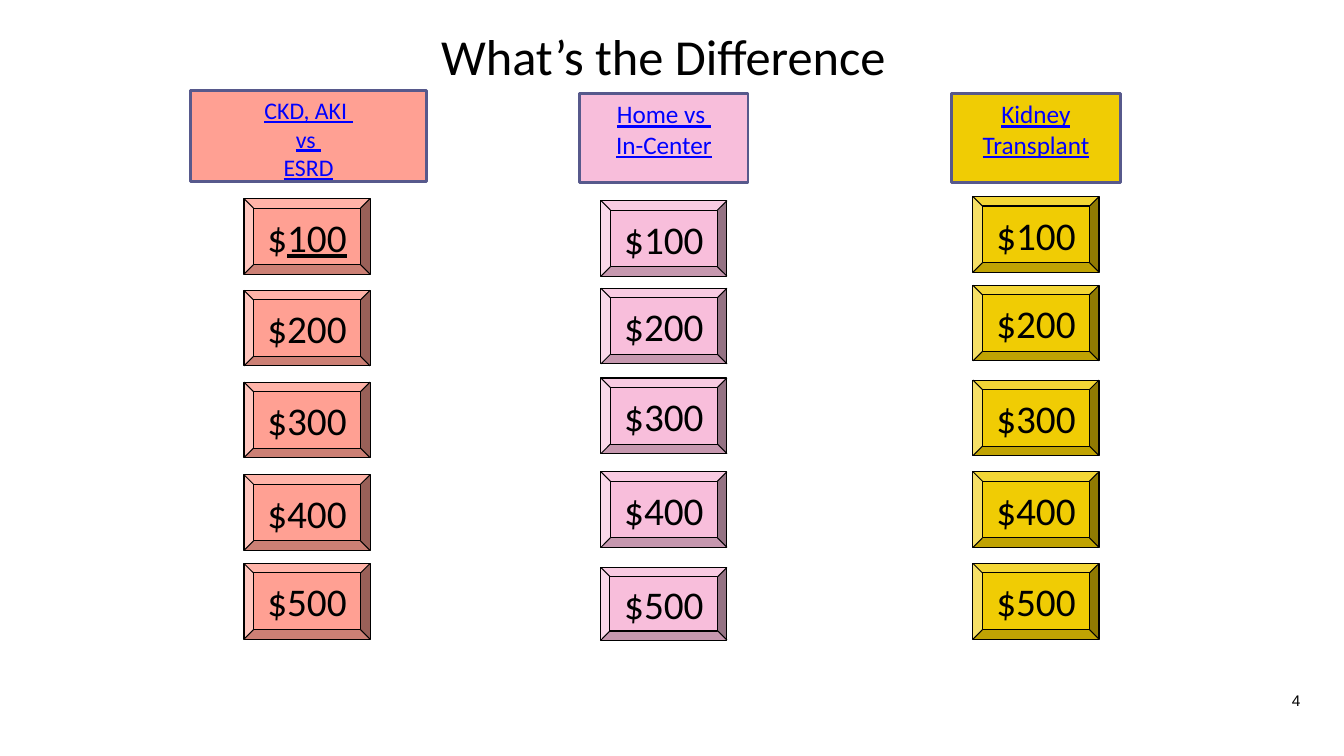
from dataclasses import dataclass

import pptx
import pptx.dml.color
import pptx.enum.shapes
import pptx.enum.text
import pptx.util
from pptx.util import Inches

SHAPES = pptx.enum.shapes.MSO_SHAPE
ANCHOR = pptx.enum.text.MSO_ANCHOR
BLACK = "000000"
LINK_BLUE = "0000FF"
HEADER_BORDER = "57598C"
BUTTON_WIDTH = 1.25


@dataclass
class Box:
    left: float
    top: float
    width: float
    height: float

    def lengths(self) -> tuple:
        return tuple(Inches(v) for v in (self.left, self.top, self.width, self.height))


@dataclass
class Category:
    name: str
    header: Box
    header_size: float
    color: str
    button_left: float
    button_tops: tuple[float, ...]
    last_height: float = 0.75
    first_amount_underlined: bool = False


CATEGORIES = [
    Category("CKD, AKI \nvs \nESRD", Box(1.89, 0.9, 2.34, 0.9), 17, "FFA093",
             2.42, (1.97, 2.88, 3.79, 4.71, 5.59), first_amount_underlined=True),
    Category("Home vs \nIn-Center", Box(5.75, 0.93, 1.67, 0.88), 18, "F8BEDB",
             5.96, (1.99, 2.86, 3.75, 4.68, 5.63), last_height=0.72),
    Category("Kidney Transplant", Box(9.44, 0.93, 1.67, 0.88), 18, "F0CC04",
             9.65, (1.95, 2.83, 3.77, 4.68, 5.59)),
]


def rgb(color: str) -> pptx.dml.color.RGBColor:
    return pptx.dml.color.RGBColor.from_string(color)


def format_text(text_frame, size: float, color: str, font: str = "Calibri",
                underline: bool = False, anchor=ANCHOR.TOP) -> None:
    text_frame.word_wrap = True
    text_frame.vertical_anchor = anchor
    for paragraph in text_frame.paragraphs:
        paragraph.alignment = pptx.enum.text.PP_ALIGN.CENTER
        for run in paragraph.runs:
            run.font.name = font
            run.font.size = pptx.util.Pt(size)
            run.font.color.rgb = rgb(color)
            if underline:
                run.font.underline = True


def add_panel(slide, kind, box: Box, fill: str, border: str, border_width: float):
    shape = slide.shapes.add_shape(kind, *box.lengths())
    shape.shadow.inherit = False
    shape.fill.solid()
    shape.fill.fore_color.rgb = rgb(fill)
    shape.line.color.rgb = rgb(border)
    shape.line.width = pptx.util.Pt(border_width)
    return shape


def add_category(slide, category: Category) -> None:
    header = add_panel(slide, SHAPES.RECTANGLE, category.header,
                       category.color, HEADER_BORDER, 2)
    header.text_frame.text = category.name
    format_text(header.text_frame, category.header_size, LINK_BLUE, underline=True)

    last = len(category.button_tops)
    for number, top in enumerate(category.button_tops, start=1):
        height = category.last_height if number == last else 0.75
        button = add_panel(slide, SHAPES.BEVEL,
                           Box(category.button_left, top, BUTTON_WIDTH, height),
                           category.color, BLACK, 0.75)
        paragraph = button.text_frame.paragraphs[0]
        paragraph.text = f"${number}00"
        if number == 1 and category.first_amount_underlined:
            paragraph.text = "$"
            amount = paragraph.add_run()
            amount.text = "100"
            amount.font.underline = True
        format_text(button.text_frame, 28, BLACK, anchor=ANCHOR.MIDDLE)


def add_title(slide) -> None:
    title = slide.shapes.title
    title.left, title.top, title.width, title.height = Box(2.5, 0.2, 8.16, 0.71).lengths()
    title.text_frame.text = "What’s the Difference"
    title.text_frame.auto_size = pptx.enum.text.MSO_AUTO_SIZE.SHAPE_TO_FIT_TEXT
    format_text(title.text_frame, 36, BLACK)


def add_page_number(slide) -> None:
    text_frame = slide.shapes.add_textbox(*Box(12.72, 6.82, 0.27, 0.26).lengths()).text_frame
    text_frame.margin_left = text_frame.margin_right = Inches(0.04)
    text_frame.margin_top = text_frame.margin_bottom = Inches(0.04)
    text_frame.text = "4"
    format_text(text_frame, 11, BLACK, font="Arial")


def main() -> None:
    presentation = pptx.Presentation()
    presentation.slide_width = Inches(13.33)
    presentation.slide_height = Inches(7.5)
    slide = presentation.slides.add_slide(presentation.slide_layouts.get_by_name("Title Only"))
    add_title(slide)
    for category in CATEGORIES:
        add_category(slide, category)
    add_page_number(slide)
    presentation.save("out.pptx")


if __name__ == "__main__":
    main()
